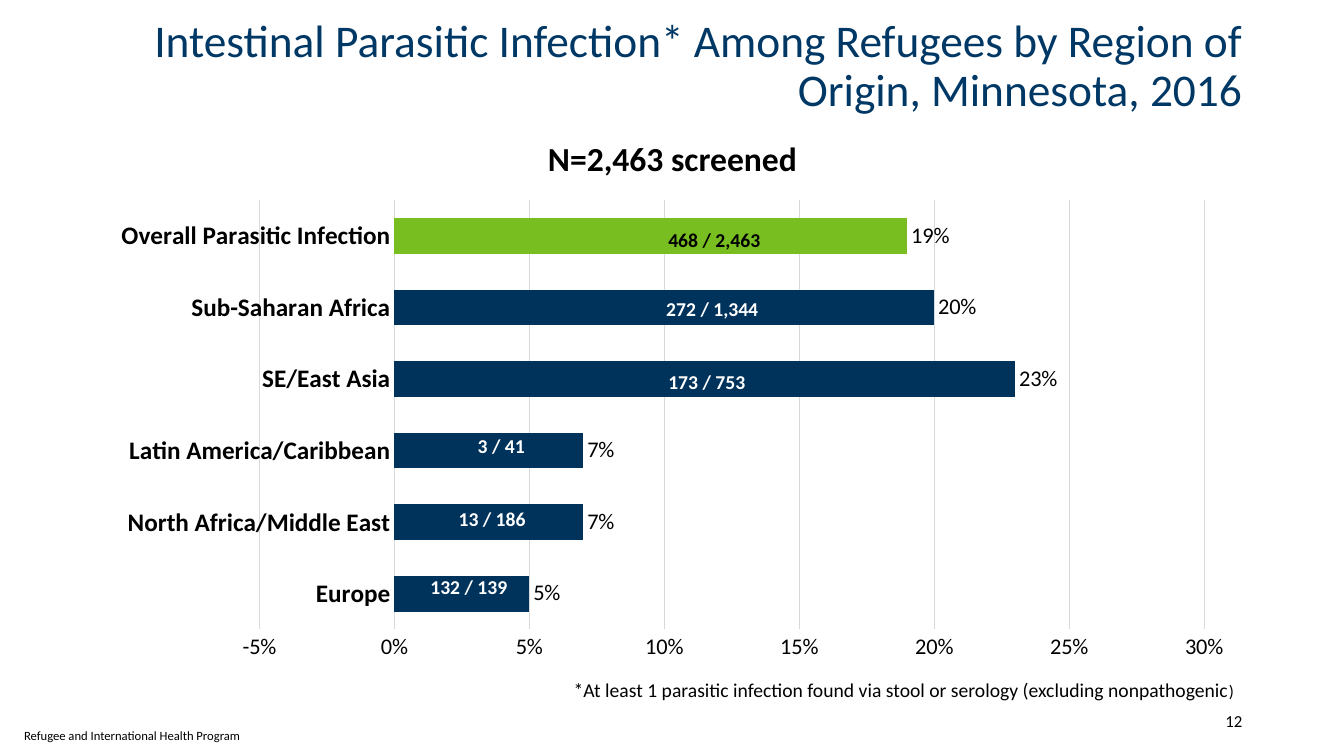
from pptx import Presentation
from pptx.chart.data import CategoryChartData
from pptx.dml.color import RGBColor
from pptx.enum.chart import XL_CHART_TYPE, XL_LABEL_POSITION, XL_TICK_MARK
from pptx.enum.text import MSO_ANCHOR, PP_ALIGN
from pptx.util import Inches, Pt

BLACK = RGBColor(0x00, 0x00, 0x00)
WHITE = RGBColor(0xFF, 0xFF, 0xFF)
BLUE = RGBColor(0x00, 0x38, 0x65)
NAVY = RGBColor(0x00, 0x33, 0x5C)
GREEN = RGBColor(0x78, 0xBE, 0x21)
GREY = RGBColor(0xD9, 0xD9, 0xD9)
FACE = "Calibri"

deck = Presentation()
deck.slide_width, deck.slide_height = Inches(13.33), Inches(7.5)
slide = deck.slides.add_slide(deck.slide_layouts[6])


def style(font, size, color=BLACK, bold=False):
    font.name, font.size, font.bold = FACE, Pt(size), bold
    font.color.rgb = color


def label(text, box, size, color=BLACK, bold=False,
          align=PP_ALIGN.LEFT, anchor=MSO_ANCHOR.TOP):
    frame = slide.shapes.add_textbox(*[Inches(n) for n in box]).text_frame
    frame.word_wrap = True
    frame.vertical_anchor = anchor
    para = frame.paragraphs[0]
    para.text, para.alignment = text, align
    style(para.font, size, color, bold)
    return para


# Footer, title and page number
label("Refugee and International Health Program", (0.14, 7.17, 2.6, 0.25), 9)
title = label("Intestinal Parasitic Infection* Among Refugees by Region of "
              "Origin, Minnesota, 2016", (0.92, 0.17, 11.5, 1), 32.4, BLUE,
              align=PP_ALIGN.RIGHT, anchor=MSO_ANCHOR.MIDDLE)
title.line_spacing = 0.9
label("12", (10.82, 6.95, 1.6, 0.4), 12,
      align=PP_ALIGN.RIGHT, anchor=MSO_ANCHOR.MIDDLE)

# Bar chart, listed from the bottom bar up
rates = {
    "Europe": 0.05,
    "North Africa/Middle East": 0.07,
    "Latin America/Caribbean": 0.07,
    "SE/East Asia": 0.23,
    "Sub-Saharan Africa": 0.2,
    "Overall Parasitic Infection": 0.19,
}
data = CategoryChartData(number_format="0%")
data.categories = list(rates)
data.add_series("Series 1", list(rates.values()))
chart = slide.shapes.add_chart(
    XL_CHART_TYPE.BAR_CLUSTERED, Inches(0.97), Inches(1.89),
    Inches(11.39), Inches(4.76), data).chart
chart.has_legend = chart.has_title = False
style(chart.font, 10, BLUE)

plot = chart.plots[0]
plot.gap_width = 100
plot.vary_by_categories = False
bars = plot.series[0]
bars.invert_if_negative = False
for part, color in ((bars, NAVY), (bars.points[len(rates) - 1], GREEN)):
    part.format.fill.solid()
    part.format.fill.fore_color.rgb = color

plot.has_data_labels = True
tags = plot.data_labels
tags.show_value = True
tags.number_format, tags.number_format_is_linked = "0%", False
tags.position = XL_LABEL_POSITION.OUTSIDE_END
style(tags.font, 16)

# Axes
names, scale = chart.category_axis, chart.value_axis
for axis in (names, scale):
    axis.major_tick_mark = axis.minor_tick_mark = XL_TICK_MARK.NONE
style(names.tick_labels.font, 18, bold=True)
style(scale.tick_labels.font, 16)
scale.minimum_scale, scale.maximum_scale, scale.major_unit = -0.05, 0.3, 0.05
scale.tick_labels.number_format = "0%"
scale.tick_labels.number_format_is_linked = False
scale.format.line.fill.background()
scale.has_major_gridlines = True
for line in (names.format.line, scale.major_gridlines.format.line):
    line.color.rgb, line.width = GREY, Pt(0.75)

# Heading and counts on the bars
label("N=2,463 screened", (4.17, 1.32, 5, 0.51), 24, bold=True,
      align=PP_ALIGN.CENTER)
for count, left, top, color in (
        ("468 / 2,463", 6.53, 2.21, BLACK),
        ("272 / 1,344", 6.51, 2.9, WHITE),
        ("173 / 753", 6.53, 3.62, WHITE),
        ("3 / 41", 4.64, 4.26, WHITE),
        ("13 / 186", 4.45, 4.98, WHITE),
        ("132 / 139", 4.17, 5.65, WHITE)):
    label(count, (left, top, 1.3, 0.34), 14, color, True)

# Footnote with a smaller closing bracket
note = label("*At least 1 parasitic infection found via stool or serology "
             "(excluding nonpathogenic", (5.59, 6.68, 6.9, 0.34), 14)
end = note.add_run()
end.text = ")"
end.font.size = Pt(12)

deck.save("out.pptx")
